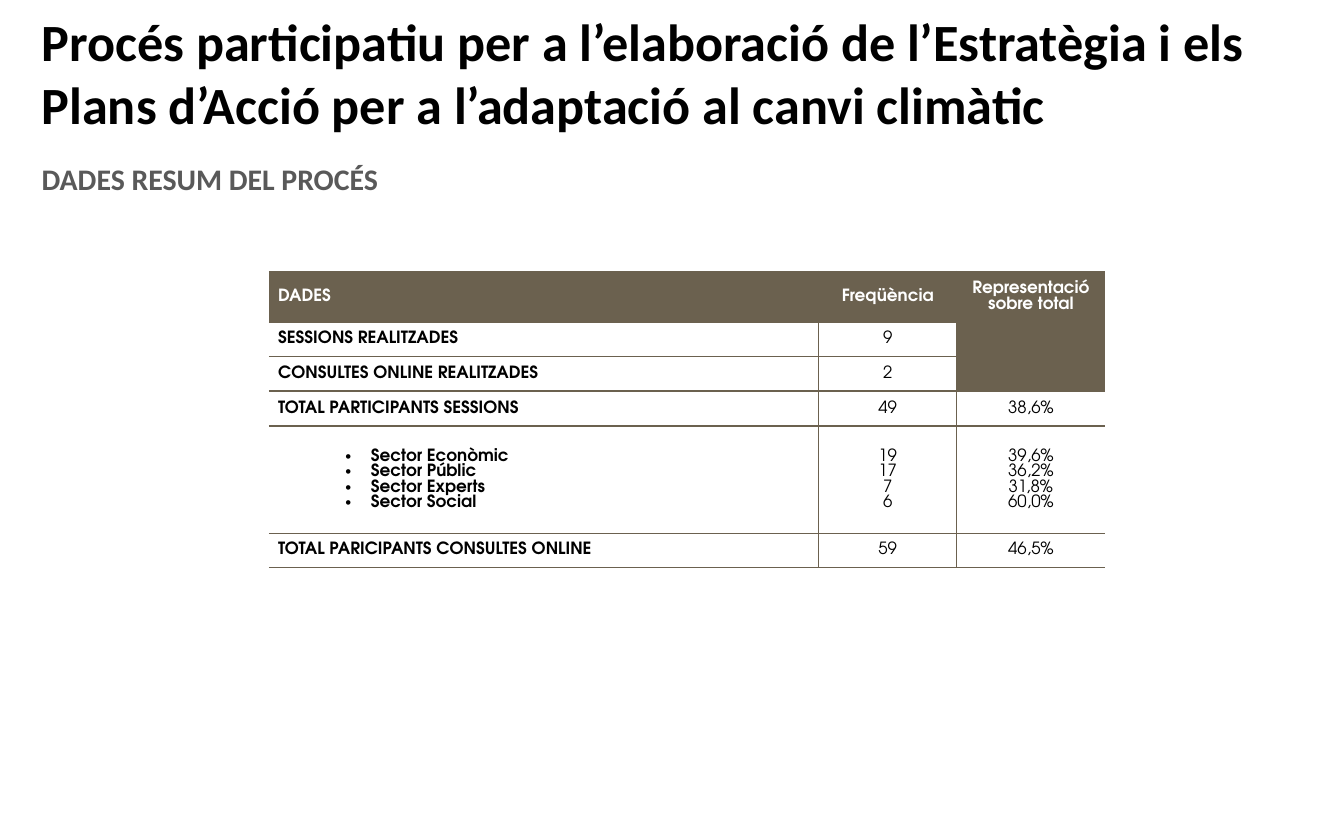
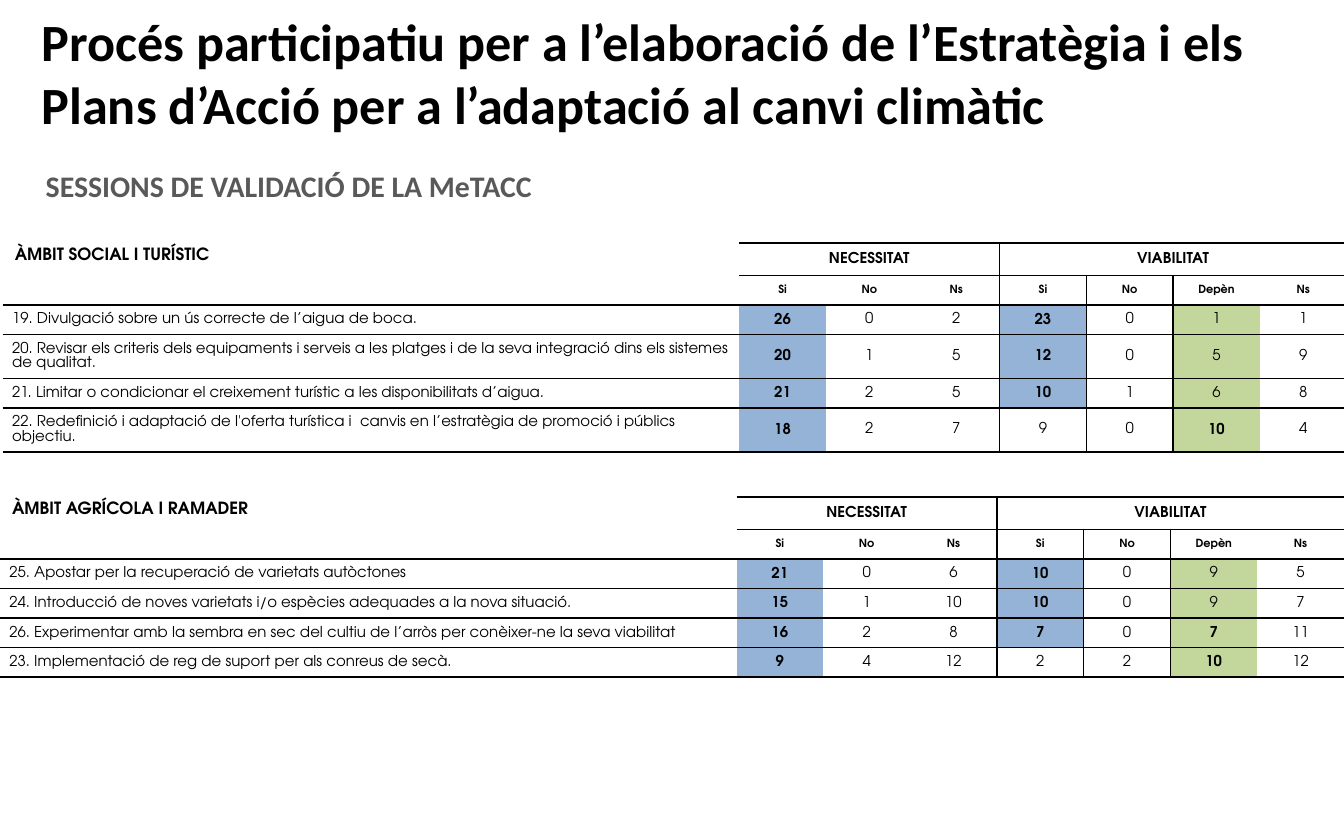
from dataclasses import dataclass

from lxml import etree
from pptx import Presentation
from pptx.dml.color import RGBColor
from pptx.enum.text import MSO_ANCHOR, MSO_AUTO_SIZE, PP_ALIGN
from pptx.oxml.ns import qn
from pptx.slide import Slide
from pptx.table import Table, _Cell
from pptx.text.text import _Paragraph
from pptx.util import Inches, Pt

LEFT, CENTER = PP_ALIGN.LEFT, PP_ALIGN.CENTER
TOP, MIDDLE = MSO_ANCHOR.TOP, MSO_ANCHOR.MIDDLE
FIT_SHAPE = MSO_AUTO_SIZE.SHAPE_TO_FIT_TEXT

BLACK = RGBColor(0x00, 0x00, 0x00)
WHITE = RGBColor(0xFF, 0xFF, 0xFF)
GREY = RGBColor(0x59, 0x59, 0x59)
BROWN = RGBColor(0x6B, 0x61, 0x4F)
BLUE = RGBColor(0x95, 0xB3, 0xD7)
GREEN = RGBColor(0xC3, 0xD6, 0x9B)

HEADING_FONT = "Calibri"
TABLE_FONT = "TeX Gyre Adventor"
PLAIN_TABLE_STYLE = "{2D5ABB26-0587-4C30-8999-92F81FD0307C}"
BORDER_TAGS = {"l": "a:lnL", "r": "a:lnR", "t": "a:lnT", "b": "a:lnB"}

PROCESS_TITLE = ("Procés participatiu per a l’elaboració de l’Estratègia i els "
                 "Plans d’Acció per a l’adaptació al canvi climàtic")

# Summary table: label, frequency, share of the total
SUMMARY_ROWS = [
    ("DADES", "Freqüència", "Representació sobre total"),
    ("SESSIONS REALITZADES", "9", ""),
    ("CONSULTES ONLINE REALITZADES", "2", ""),
    ("TOTAL PARTICIPANTS SESSIONS", "49", "38,6%"),
    ("Sector Econòmic\nSector Públic\nSector Experts\nSector Social",
     "19\n17\n7\n6", "39,6%\n36,2%\n31,8%\n60,0%"),
    ("TOTAL PARICIPANTS CONSULTES ONLINE", "59", "46,5%"),
]
SUMMARY_WIDTHS = [4.09, 1.03, 1.1]
SUMMARY_HEIGHTS = [0.38, 0.25, 0.26, 0.26, 0.8, 0.25]
TOTAL_ROW, SECTOR_ROW = 3, 4

# Voting tables
ANSWERS = ["Si", "No", "Ns", "Si", "No", "Depèn", "Ns"]
NEED_YES, NEED_LAST, VIABLE_YES, VIABLE_DEPENDS = 1, 3, 4, 6
MEASURE_WIDTH = 5.48
ANSWER_WIDTH = (10 - MEASURE_WIDTH) / len(ANSWERS)


@dataclass
class Measure:
    text: str
    votes: list[int]
    height: float = 0.22


@dataclass
class Scope:
    name: str
    left: float
    top: float
    measures: list[Measure]


@dataclass
class CellStyle:
    size: float
    bold: bool = False
    color: RGBColor = BLACK
    align: PP_ALIGN = CENTER
    anchor: MSO_ANCHOR = MIDDLE
    inset_x: float = 0.09
    inset_y: float = 0.04
    fill: RGBColor | None = None
    bulleted: bool = False


SCOPES = [
    Scope("ÀMBIT SOCIAL I TURÍSTIC", 0.02, 1.81, [
        Measure("19. Divulgació sobre un ús correcte de l’aigua de boca.",
                [26, 0, 2, 23, 0, 1, 1]),
        Measure("20. Revisar els criteris dels equipaments i serveis a les platges i "
                "de la seva integració dins els sistemes de qualitat.",
                [20, 1, 5, 12, 0, 5, 9], 0.32),
        Measure("21. Limitar o condicionar el creixement turístic a les "
                "disponibilitats d’aigua.", [21, 2, 5, 10, 1, 6, 8]),
        Measure("22. Redefinició i adaptació de l'oferta turística i  canvis en "
                "l’estratègia de promoció i públics objectiu.",
                [18, 2, 7, 9, 0, 10, 4], 0.32),
    ]),
    Scope("ÀMBIT AGRÍCOLA I RAMADER", 0, 3.7, [
        Measure("25. Apostar per la recuperació de varietats autòctones",
                [21, 0, 6, 10, 0, 9, 5]),
        Measure("24. Introducció de noves varietats i/o espècies adequades a la nova "
                "situació.", [15, 1, 10, 10, 0, 9, 7]),
        Measure("26. Experimentar amb la sembra en sec del cultiu de l’arròs per "
                "conèixer-ne la seva viabilitat", [16, 2, 8, 7, 0, 7, 11]),
        Measure("23. Implementació de reg de suport per als conreus de secà.",
                [9, 4, 12, 2, 2, 10, 12]),
    ]),
]


def set_format(target: object, values: dict) -> None:
    for name, value in values.items():
        setattr(target, name, value)


def add_run(paragraph: _Paragraph, text: str, font: str, size: float,
            color: RGBColor, bold: bool) -> None:
    run = paragraph.add_run()
    run.text = text
    set_format(run.font, {"name": font, "size": Pt(size), "bold": bold})
    run.font.color.rgb = color


def add_heading(slide: Slide, text: str, left: float, top: float, width: float,
                height: float, size: float, color: RGBColor) -> None:
    frame = slide.shapes.add_textbox(
        Inches(left), Inches(top), Inches(width), Inches(height)).text_frame
    set_format(frame, {
        "word_wrap": True, "auto_size": FIT_SHAPE, "vertical_anchor": MIDDLE,
        "margin_left": Inches(0.09), "margin_right": Inches(0.09),
        "margin_top": Inches(0.04), "margin_bottom": Inches(0.04)})
    add_run(frame.paragraphs[0], text, HEADING_FONT, size, color, True)


def add_title(slide: Slide) -> None:
    add_heading(slide, PROCESS_TITLE, 0.22, 0.02, 9.78, 1.03, 28, BLACK)


def add_plain_table(slide: Slide, left: float, top: float, widths: list[float],
                    heights: list[float]) -> Table:
    frame = slide.shapes.add_table(
        len(heights), len(widths), Inches(left), Inches(top),
        Inches(sum(widths)), Inches(sum(heights)))
    table = frame.table
    set_format(table, {"first_row": False, "horz_banding": False})
    table._tbl.tblPr.find(qn("a:tableStyleId")).text = PLAIN_TABLE_STYLE
    for column, width in zip(table.columns, widths):
        column.width = Inches(width)
    for row, height in zip(table.rows, heights):
        row.height = Inches(height)
    return table


def add_bullet(paragraph: _Paragraph) -> None:
    properties = paragraph._p.get_or_add_pPr()
    properties.set("marL", str(Inches(0.69)))
    properties.set("indent", str(Inches(-0.19)))
    etree.SubElement(properties, qn("a:buFont"), typeface="Arial")
    etree.SubElement(properties, qn("a:buChar"), char="•")


def fill_cell(cell: _Cell, text: str, style: CellStyle) -> None:
    set_format(cell, {
        "vertical_anchor": style.anchor,
        "margin_left": Inches(style.inset_x), "margin_right": Inches(style.inset_x),
        "margin_top": Inches(style.inset_y), "margin_bottom": Inches(style.inset_y)})
    if style.fill is None:
        cell.fill.background()
    else:
        cell.fill.solid()
        cell.fill.fore_color.rgb = style.fill
    frame = cell.text_frame
    for index, line in enumerate(text.split("\n")):
        paragraph = frame.add_paragraph() if index else frame.paragraphs[0]
        paragraph.alignment = style.align
        if style.bulleted:
            paragraph.level = 1
            add_bullet(paragraph)
        if line:
            add_run(paragraph, line, TABLE_FONT, style.size, style.color, style.bold)
        else:
            etree.SubElement(paragraph._p, qn("a:endParaRPr"),
                             sz=str(int(style.size * 100)))


def set_borders(cell: _Cell, sides: str, color: RGBColor, width: float) -> None:
    """Draw the given sides; line elements come before the cell's fill."""
    properties = cell._tc.get_or_add_tcPr()
    drawn = [side for side in BORDER_TAGS if side in sides]
    for position, side in enumerate(drawn):
        line = etree.Element(qn(BORDER_TAGS[side]), w=str(Pt(width)))
        solid = etree.SubElement(line, qn("a:solidFill"))
        etree.SubElement(solid, qn("a:srgbClr"), val=str(color))
        properties.insert(position, line)


def add_summary_table(slide: Slide) -> None:
    table = add_plain_table(slide, 2, 2.02, SUMMARY_WIDTHS, SUMMARY_HEIGHTS)
    last_column = len(SUMMARY_WIDTHS) - 1
    for row, texts in enumerate(SUMMARY_ROWS):
        for column, text in enumerate(texts):
            header = row == 0
            style = CellStyle(
                9, bold=header or column == 0, color=WHITE if header else BLACK,
                align=CENTER if column else LEFT, inset_x=0.07, inset_y=0,
                fill=BROWN if header or not text else None,
                bulleted=row == SECTOR_ROW and column == 0)
            cell = table.cell(row, column)
            fill_cell(cell, text, style)
            # The sector breakdown stays open towards its total
            sides = (("l" if column else "") + ("r" if column < last_column else "")
                     + ("t" if row != SECTOR_ROW else "")
                     + ("b" if row != TOTAL_ROW else ""))
            set_borders(cell, sides, BROWN, 0.75)


def vote_style(column: int, votes: list[int]) -> CellStyle:
    """Need is always highlighted; viability by the larger of Si and Depèn."""
    yes, depends = votes[VIABLE_YES - 1], votes[VIABLE_DEPENDS - 1]
    leads = {NEED_YES: True, VIABLE_YES: yes >= depends,
             VIABLE_DEPENDS: depends >= yes}.get(column, False)
    fill = GREEN if column == VIABLE_DEPENDS else BLUE if leads else None
    return CellStyle(8, bold=leads, fill=fill)


def add_scope_table(slide: Slide, scope: Scope) -> None:
    widths = [MEASURE_WIDTH] + [ANSWER_WIDTH] * len(ANSWERS)
    heights = [0.24, 0.22] + [measure.height for measure in scope.measures]
    table = add_plain_table(slide, scope.left, scope.top, widths, heights)

    # Group headings over the answers
    groups = {0: scope.name, NEED_YES: "NECESSITAT", VIABLE_YES: "VIABILITAT"}
    scope_style = CellStyle(9, bold=True, align=LEFT, anchor=TOP)
    group_style = CellStyle(8, bold=True)
    for column in range(len(widths)):
        fill_cell(table.cell(0, column), groups.get(column, ""),
                  group_style if column else scope_style)
    table.cell(0, NEED_YES).merge(table.cell(0, NEED_LAST))
    table.cell(0, VIABLE_YES).merge(table.cell(0, len(ANSWERS)))

    # Answer headings
    for column, answer in enumerate([""] + ANSWERS):
        fill_cell(table.cell(1, column), answer, CellStyle(6, bold=True, inset_x=0))

    # Measures and their votes
    measure_style = CellStyle(8, align=LEFT, inset_x=0.07, inset_y=0.03)
    for row, measure in enumerate(scope.measures, start=2):
        fill_cell(table.cell(row, 0), measure.text, measure_style)
        for column, vote in enumerate(measure.votes, start=1):
            fill_cell(table.cell(row, column), str(vote),
                      vote_style(column, measure.votes))

    # Rules between rows, and on both sides of the viability "Si"
    for row in range(len(heights)):
        for column in range(len(widths)):
            sides = "tb"
            if column == 0 and row < 2:
                sides = "b" if row else ""
            if column == NEED_LAST or (row == 0 and column == NEED_YES):
                sides += "r"
            if column == VIABLE_YES:
                sides += "lr" if row else "l"
            if column == VIABLE_YES + 1 and row:
                sides += "l"
            set_borders(table.cell(row, column), sides, BLACK, 1)


def main() -> None:
    deck = Presentation()
    set_format(deck, {"slide_width": Inches(10), "slide_height": Inches(6.25)})
    blank = deck.slide_layouts[6]

    # Summary of the process
    summary = deck.slides.add_slide(blank)
    add_heading(summary, "DADES RESUM DEL PROCÉS", 0.22, 1.15, 7.05, 0.36, 16, GREY)
    add_title(summary)
    add_summary_table(summary)

    # Validation sessions
    validation = deck.slides.add_slide(blank)
    for scope in SCOPES:
        add_scope_table(validation, scope)
    add_heading(validation, "SESSIONS DE VALIDACIÓ DE LA MeTACC",
                0.25, 1.2, 7.05, 0.36, 16, GREY)
    add_title(validation)

    deck.save("out.pptx")


if __name__ == "__main__":
    main()
